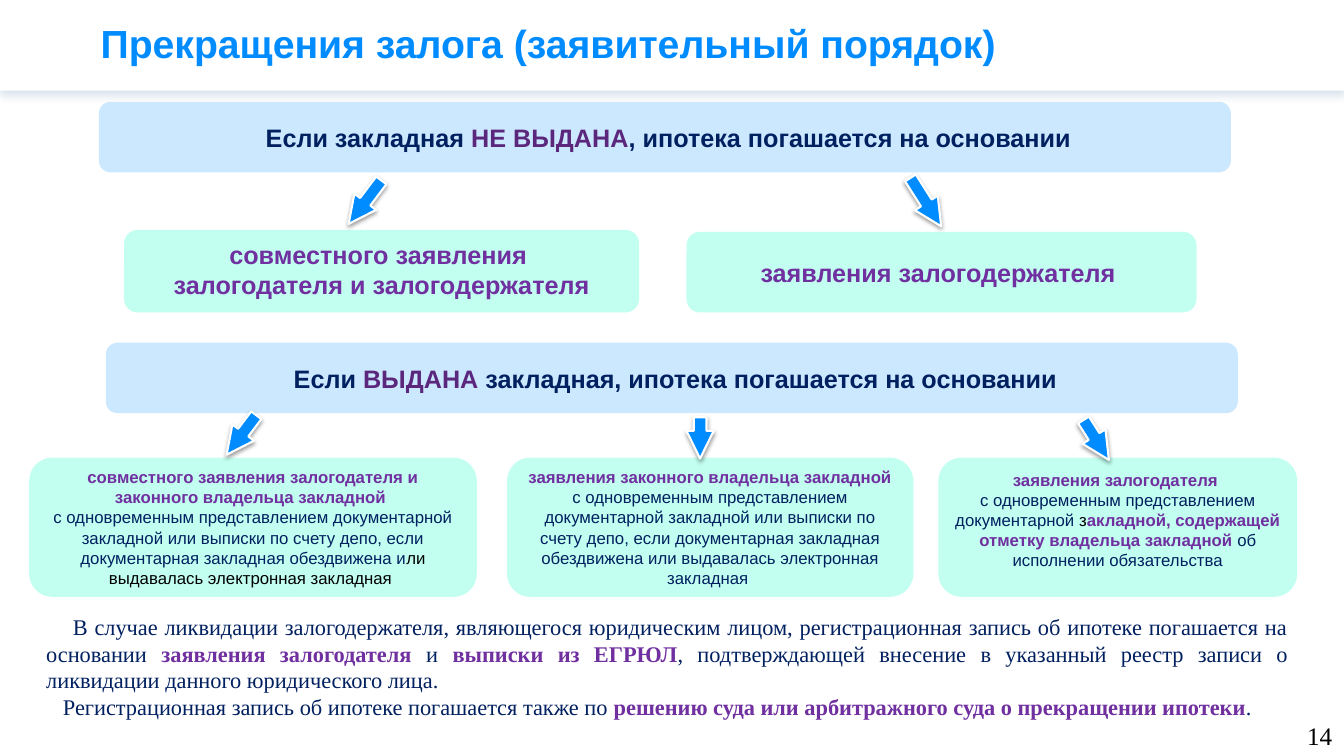
import pptx
import pptx.util
import pptx.dml.color
import pptx.enum.shapes
import pptx.enum.text
import lxml.etree
from dataclasses import dataclass

Pt = pptx.util.Pt
Kind = pptx.enum.shapes.MSO_SHAPE
Align = pptx.enum.text.PP_ALIGN
Anchor = pptx.enum.text.MSO_ANCHOR


@dataclass(frozen=True)
class Theme:
    white: str = "FFFFFF"
    black: str = "000000"
    blue: str = "008CFF"
    navy: str = "002060"
    plum: str = "5B277D"
    violet: str = "7030A0"
    sky: str = "CCE8FF"
    mint: str = "C2FFF0"
    haze: str = "004680"
    sans: str = "Arial"
    serif: str = "Times New Roman"
    title: int = 28
    main: int = 18
    note: int = 16
    small: int = 12


T = Theme()


def color(code):
    return pptx.dml.color.RGBColor.from_string(code)


def shade(shape, code, alpha, blur, dist):
    """Give the shape a shadow that falls straight down."""
    space = "http://schemas.openxmlformats.org/drawingml/2006/main"
    shape.shadow.inherit = False
    effects = shape._element.spPr.find(f"{{{space}}}effectLst")
    outer = lxml.etree.SubElement(
        effects, f"{{{space}}}outerShdw", blurRad=str(Pt(blur)),
        dist=str(Pt(dist)), dir="5400000", algn="t", rotWithShape="0")
    tint = lxml.etree.SubElement(outer, f"{{{space}}}srgbClr", val=code)
    lxml.etree.SubElement(tint, f"{{{space}}}alpha", val=str(alpha * 1000))


def write(shape, paras, size, font=T.sans, align=Align.CENTER,
          anchor=Anchor.MIDDLE):
    """Fill the shape with paragraphs, each a list of (text, colour, bold)."""
    frame = shape.text_frame
    frame.word_wrap = True
    frame.vertical_anchor = anchor
    for i, runs in enumerate(paras):
        para = frame.add_paragraph() if i else frame.paragraphs[0]
        para.alignment = align
        for text, code, bold in runs:
            run = para.add_run()
            run.text = text
            run.font.name = font
            run.font.size = Pt(size)
            run.font.bold = bold
            run.font.color.rgb = color(code)
    return frame


def block(slide, kind, box, fill):
    shape = slide.shapes.add_shape(kind, *map(Pt, box))
    shape.shadow.inherit = False
    shape.fill.solid()
    shape.fill.fore_color.rgb = color(fill)
    shape.line.fill.background()
    return shape


def label(slide, box):
    return slide.shapes.add_textbox(*map(Pt, box))


def arrow(slide, box, turn):
    shape = block(slide, Kind.RIGHT_ARROW, box, T.blue)
    shape.adjustments[0] = 0.47
    shape.adjustments[1] = 1.02
    shape.rotation = turn
    shape.line.color.rgb = color(T.white)
    shape.line.width = Pt(1.5)
    shade(shape, T.black, 38, 3.1, 1.6)


def header(slide, box, text):
    x, y, w, h = box
    band = block(slide, Kind.RECTANGLE, box, T.white)
    shade(band, T.haze, 15, 6, 3)
    name = label(slide, (x + 64.8, y, w - 113.2, h + 0.7))
    frame = write(name, [[(text, T.blue, True)]], T.title, align=Align.LEFT)
    frame.paragraphs[0].line_spacing = 0.9


def branch(slide, box, head, cards, arrows, size):
    """Draw a banner in the box; cards and arrows are placed from its corner."""
    x, y = box[:2]
    banner = block(slide, Kind.ROUNDED_RECTANGLE, box, T.sky)
    write(banner, [head], T.main)
    for (dx, dy, w, h), anchor, paras in cards:
        card = block(slide, Kind.ROUNDED_RECTANGLE, (x + dx, y + dy, w, h), T.mint)
        write(card, paras, size, anchor=anchor)
    for dx, dy, w, turn in arrows:
        arrow(slide, (x + dx, y + dy, w, 19.4), turn)


def notes(slide, box, paras, indents):
    frame = write(label(slide, box), paras, T.note, T.serif, Align.JUSTIFY,
                  Anchor.TOP)
    for para, indent in zip(frame.paragraphs, indents):
        para._p.get_or_add_pPr().set("indent", str(Pt(indent)))


def number(slide, box, text):
    write(label(slide, box), [[(text, T.black, False)]], T.main, T.serif,
          Align.LEFT)


def main():
    deck = pptx.Presentation()
    deck.slide_width, deck.slide_height = Pt(960), Pt(540)
    slide = deck.slides.add_slide(deck.slide_layouts[6])
    left, right = 126.9, 57.5

    header(slide, (0, 0, 960, 64.8), "Прекращения залога (заявительный порядок)")
    branch(
        slide, (70.6, 72.7, 808.6, 50.4),
        [(" Если закладная ", T.navy, True), ("НЕ ВЫДАНА", T.plum, True),
         (", ипотека погашается на основании", T.navy, True)],
        [((18, 91.5, 368, 59), Anchor.TOP,
          [[("совместного заявления ", T.violet, True)],
           [("залогодателя и залогодержателя", T.violet, True)]]),
         ((419.8, 92.9, 364.3, 57.6), Anchor.MIDDLE,
          [[("заявления залогодержателя ", T.violet, True)]])],
        [(170.6, 62, 38.9, left), (570.2, 62, 41, right)], T.main)
    branch(
        slide, (75.6, 244.8, 808.6, 50.4),
        [(" Если ", T.navy, True), ("ВЫДАНА", T.plum, True),
         (" закладная, ипотека погашается на основании", T.navy, True)],
        [((-54.7, 82.1, 319.7, 99.4), Anchor.MIDDLE,
          [[("совместного заявления залогодателя и законного владельца "
             "закладной ", T.violet, True)],
           [("с одновременным представлением документарной закладной или "
             "выписки по счету депо, если документарная закладная "
             "обездвижена и", T.navy, False),
            ("ли выдавалась электронная закладная ", T.black, False)]]),
         ((286.6, 82.1, 290.2, 99.4), Anchor.MIDDLE,
          [[("заявления законного владельца закладной ", T.violet, True),
            ("с одновременным представлением документарной закладной или "
             "выписки по счету депо, если документарная закладная "
             "обездвижена или выдавалась электронная закладная ",
             T.navy, False)]]),
         ((594.7, 82.1, 256.3, 99.4), Anchor.TOP,
          [[("заявления залогодателя ", T.violet, True)],
           [("с одновременным представлением документарной", T.navy, False),
            (" з", T.black, False),
            ("акладной, содержащей отметку владельца закладной",
             T.violet, True),
            (" об исполнении обязательства", T.navy, False)]])],
        [(79.2, 56.2, 35.3, left), (409.7, 58.3, 29.5, 90),
         (690.5, 59.8, 33.8, right)], T.small)
    notes(
        slide, (25.9, 434.2, 901.4, 83.5),
        [[("В случае ликвидации залогодержателя, являющегося юридическим "
           "лицом, регистрационная запись об ипотеке погашается на "
           "основании ", T.navy, False),
          ("заявления залогодателя", T.violet, True),
          (" и ", T.navy, False),
          ("выписки из ЕГРЮЛ", T.violet, True),
          (", подтверждающей внесение в указанный реестр записи о "
           "ликвидации данного юридического лица.", T.navy, False)],
         [("Регистрационная запись об ипотеке погашается также по ",
           T.navy, False),
          ("решению суда или арбитражного суда о прекращении ипотеки",
           T.violet, True),
          (".", T.navy, False)]],
        (19, 12))
    number(slide, (926.6, 511.2, 33.4, 28.8), "14")
    deck.save("out.pptx")


if __name__ == "__main__":
    main()
